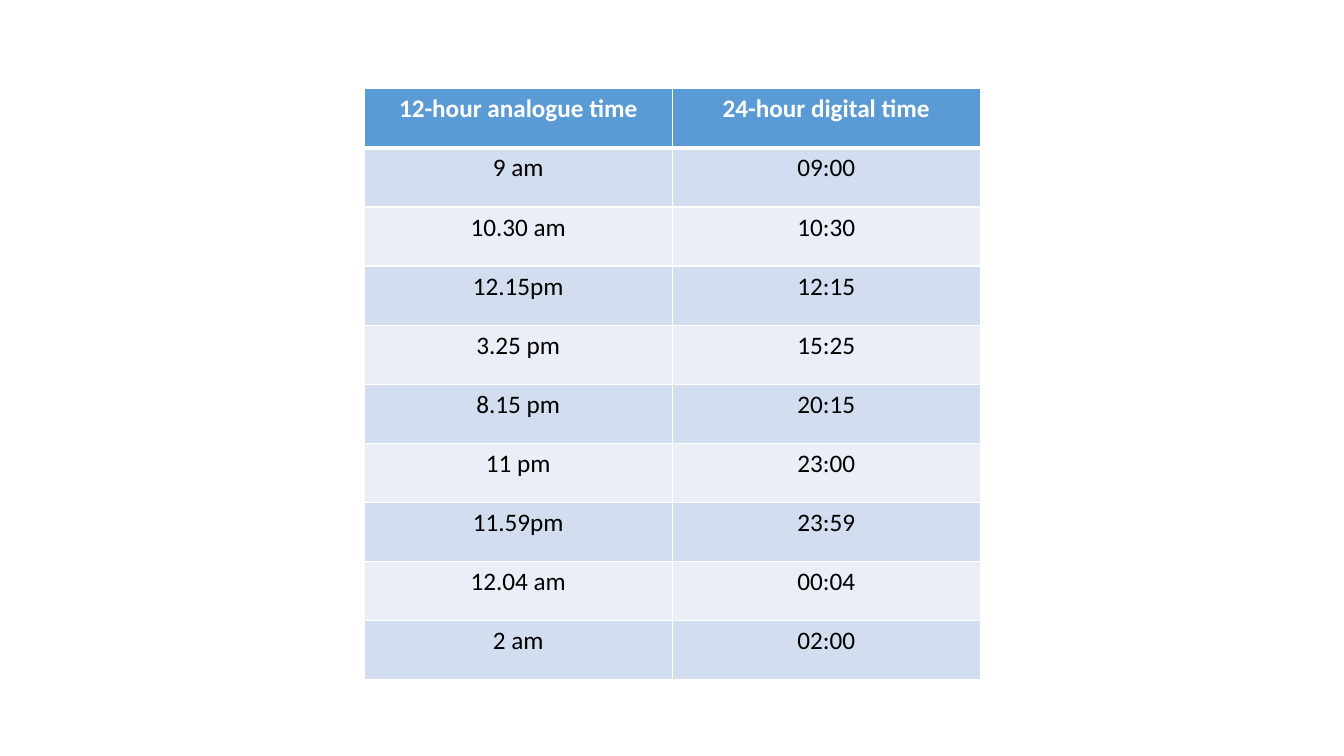
from lxml import etree
from pptx import Presentation
from pptx.dml.color import RGBColor
from pptx.enum.text import PP_ALIGN
from pptx.oxml.ns import qn
from pptx.util import Cm, Pt

CENTER = PP_ALIGN.CENTER
BLANK_LAYOUT = 6

HEADER = ("12-hour analogue time", "24-hour digital time")
TIMES = [
    ("9 am", "09:00"),
    ("10.30 am", "10:30"),
    ("12.15pm", "12:15"),
    ("3.25 pm", "15:25"),
    ("8.15 pm", "20:15"),
    ("11 pm", "23:00"),
    ("11.59pm", "23:59"),
    ("12.04 am", "00:04"),
    ("2 am", "02:00"),
]


def rgb(value):
    return RGBColor.from_string(value)


class SlideBuilder:
    """Holds the table style and the current slide."""

    font = {"name": "Calibri", "size": Pt(18)}
    header_fill, header_text = "5B9BD5", "FFFFFF"
    band_fills, body_text = ("EAEFF7", "D2DEEF"), "000000"
    border_color, thin, thick = "FFFFFF", 1, 3

    def __init__(self, prs):
        self.slide = prs.slides.add_slide(prs.slide_layouts[BLANK_LAYOUT])

    def add_table(self, rows, left, top, width, height):
        """Add a table with a header row and banded body rows."""
        shape = self.slide.shapes.add_table(
            len(rows), len(rows[0]), Cm(left), Cm(top), Cm(width), Cm(height))
        for i, values in enumerate(rows):
            for j, text in enumerate(values):
                self.format_cell(shape.table.cell(i, j), text, i)

    def format_cell(self, cell, text, row):
        is_header = row == 0
        self.set_borders(cell, {
            "L": self.thin,
            "R": self.thin,
            "T": self.thick if row == 1 else self.thin,
            "B": self.thick if is_header else self.thin,
        })
        cell.fill.solid()
        cell.fill.fore_color.rgb = rgb(
            self.header_fill if is_header else self.band_fills[row % 2])
        p = cell.text_frame.paragraphs[0]
        p.alignment = CENTER
        r = p.add_run()
        r.text = text
        for name, value in {**self.font, "bold": is_header}.items():
            setattr(r.font, name, value)
        r.font.color.rgb = rgb(self.header_text if is_header else self.body_text)

    def set_borders(self, cell, widths):
        """Draw cell borders from widths in points, keyed by side."""
        tc_pr = cell._tc.get_or_add_tcPr()
        for side, width in widths.items():
            line = etree.SubElement(tc_pr, qn(f"a:ln{side}"), w=str(Pt(width)))
            fill = etree.SubElement(line, qn("a:solidFill"))
            etree.SubElement(fill, qn("a:srgbClr"), val=self.border_color)


def main():
    prs = Presentation()
    prs.slide_width, prs.slide_height = Cm(33.87), Cm(19.05)
    builder = SlideBuilder(prs)
    builder.add_table([HEADER, *TIMES], 9.18, 2.24, 15.52, 14.88)
    prs.save("out.pptx")


if __name__ == "__main__":
    main()
